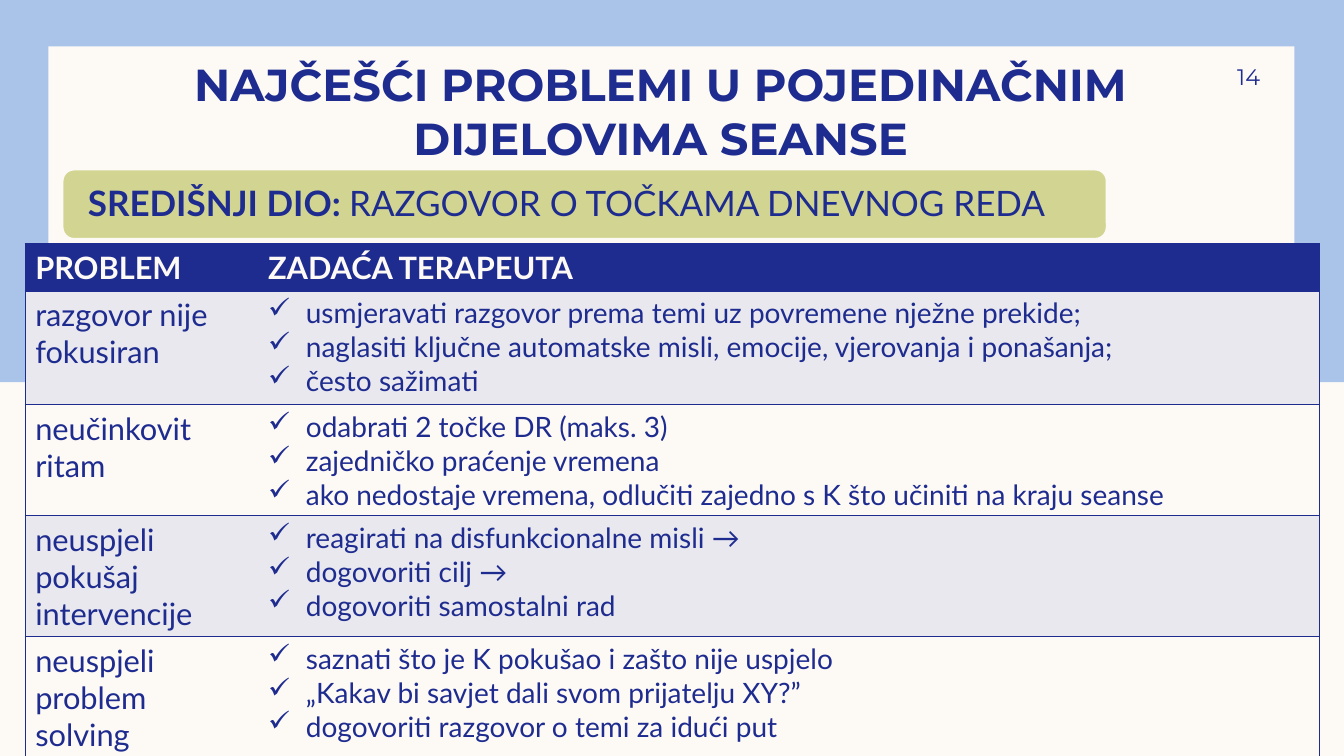
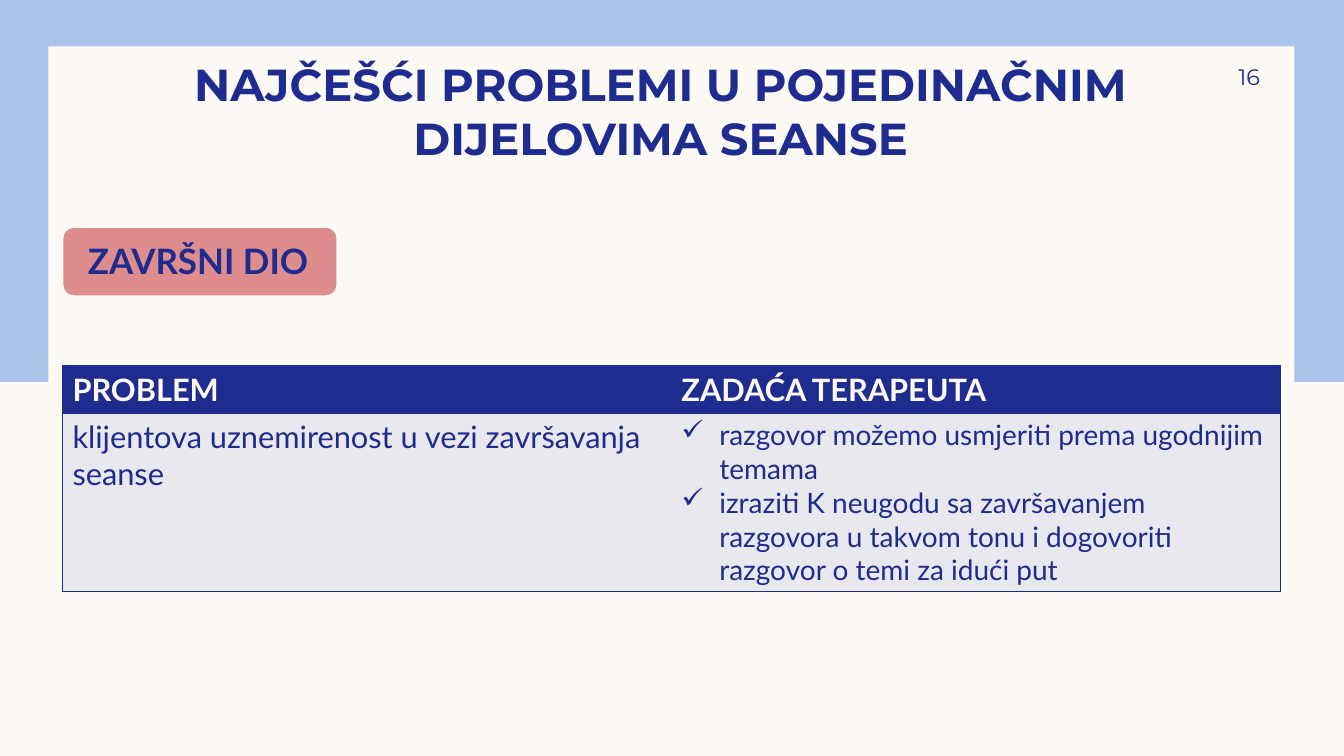
from dataclasses import dataclass

from lxml.etree import SubElement
from pptx import Presentation
from pptx.dml.color import RGBColor
from pptx.enum.shapes import MSO_SHAPE
from pptx.enum.text import MSO_ANCHOR, MSO_AUTO_SIZE, PP_ALIGN
from pptx.oxml import parse_xml
from pptx.oxml.ns import nsdecls, qn
from pptx.util import Pt


@dataclass(frozen=True)
class Theme:
    navy: str = "1F2C8F"
    cream: str = "FDFAF6"
    sky: str = "AAC3E8"
    mist: str = "E8E8EE"
    olive: str = "D2D592"
    rose: str = "DE8C8C"
    heading_font: str = "Montserrat"
    body_font: str = "Lato"
    title_size: int = 32
    banner_size: int = 25
    cell_size: int = 22
    bullet_size: int = 20
    number_size: int = 16


theme = Theme()
TITLE = "NAJČEŠĆI PROBLEMI U POJEDINAČNIM DIJELOVIMA SEANSE"
HEADER = ("PROBLEM", "ZADAĆA TERAPEUTA")
BULLET_INDENT = Pt(27)

# Each table row is a problem and the therapist's tasks
slides = [
    {
        "number": "14",
        "banner": (121, 746, theme.olive),
        "banner_runs": [("SREDIŠNJI DIO: ", True),
                        ("RAZGOVOR O TOČKAMA DNEVNOG REDA", False)],
        "table": (18, 174.2),
        "columns": (166.3, 758.2),
        "heights": (31.7, 81.4, 74.9, 81.4, 81.4),
        "rows": [
            ("razgovor nije fokusiran",
             ["usmjeravati razgovor prema temi uz povremene nježne prekide;",
              "naglasiti ključne automatske misli, emocije, vjerovanja i ponašanja;",
              "često sažimati"]),
            ("neučinkovit ritam",
             ["odabrati 2 točke DR (maks. 3)",
              "zajedničko praćenje vremena",
              "ako nedostaje vremena, odlučiti zajedno s K što učiniti na kraju seanse"]),
            ("neuspjeli pokušaj intervencije",
             ["reagirati na disfunkcionalne misli →",
              "dogovoriti cilj →",
              "dogovoriti samostalni rad"]),
            ("neuspjeli problem solving",
             ["saznati što je K pokušao i zašto nije uspjelo",
              "„Kakav bi savjet dali svom prijatelju XY?”",
              "dogovoriti razgovor o temi za idući put"]),
        ],
    },
    {
        "number": "16",
        "banner": (162, 196.5, theme.rose),
        "banner_runs": [("ZAVRŠNI DIO", True)],
        "table": (44.6, 261.4),
        "columns": (435, 435),
        "heights": (29.5, 29.5),
        "rows": [
            ("klijentova uznemirenost u vezi završavanja seanse",
             ["razgovor možemo usmjeriti prema ugodnijim temama",
              "izraziti K neugodu sa završavanjem razgovora u takvom tonu "
              "i dogovoriti razgovor o temi za idući put"]),
        ],
    },
]


def add_run(paragraph, text, size, bold=False, color=theme.navy, font=theme.body_font):
    run = paragraph.add_run()
    run.text = text
    run.font.name = font
    run.font.size = Pt(size)
    run.font.bold = bold
    run.font.color.rgb = RGBColor.from_string(color)


def add_block(slide, preset, left, top, width, height, fill):
    shape = slide.shapes.add_shape(preset, Pt(left), Pt(top), Pt(width), Pt(height))
    shape.shadow.inherit = False
    shape.fill.solid()
    shape.fill.fore_color.rgb = RGBColor.from_string(fill)
    shape.line.fill.background()
    return shape


presentation = Presentation()
presentation.slide_width = Pt(960)
presentation.slide_height = Pt(540)
background = presentation.slide_master.background.fill
background.solid()
background.fore_color.rgb = RGBColor.from_string(theme.cream)
layout = presentation.slide_layouts.get_by_name("Title Only")

for index, content in enumerate(slides):
    slide = presentation.slides.add_slide(layout)

    # Shared band and panel, moved behind the placeholders of the layout
    if index == 0:
        band = add_block(slide, MSO_SHAPE.RECTANGLE, -2, 0, 962, 273, theme.sky)
        panel = add_block(slide, MSO_SHAPE.RECTANGLE, 34.6, 33.1, 890, 474.5, theme.cream)
        for position, shape in enumerate((band, panel), start=2):
            layout.shapes.element.insert(position, shape.element)

    # Slide number
    number = slide.shapes.add_textbox(Pt(816), Pt(36), Pt(84), Pt(37.4))
    number.text_frame.word_wrap = True
    number.text_frame.vertical_anchor = MSO_ANCHOR.MIDDLE
    number.text_frame.margin_right = 0
    paragraph = number.text_frame.paragraphs[0]
    paragraph.alignment = PP_ALIGN.RIGHT
    add_run(paragraph, content["number"], theme.number_size, font=theme.heading_font)

    # Title
    title = slide.shapes.title
    title.left, title.top, title.width, title.height = Pt(128), Pt(36), Pt(688), Pt(81.4)
    frame = title.text_frame
    frame.auto_size = MSO_AUTO_SIZE.NONE
    frame.vertical_anchor = MSO_ANCHOR.BOTTOM
    frame.margin_top = frame.margin_bottom = 0
    paragraph = frame.paragraphs[0]
    paragraph.alignment = PP_ALIGN.CENTER
    add_run(paragraph, TITLE, theme.title_size, True, font=theme.heading_font)

    # Section banner
    top, width, fill = content["banner"]
    banner = add_block(slide, MSO_SHAPE.ROUNDED_RECTANGLE, 44.6, top, width, 49.7, fill)
    banner.line.color.rgb = RGBColor.from_string(theme.cream)
    banner.line.width = Pt(1.5)
    frame = banner.text_frame
    frame.word_wrap = True
    frame.vertical_anchor = MSO_ANCHOR.TOP
    frame.margin_left, frame.margin_top = Pt(15.8), Pt(6.5)
    paragraph = frame.paragraphs[0]
    paragraph.alignment = PP_ALIGN.LEFT
    for text, bold in content["banner_runs"]:
        add_run(paragraph, text, theme.banner_size, bold)

    # Table of problems and tasks
    rows = [HEADER] + content["rows"]
    left, top = content["table"]
    table = slide.shapes.add_table(
        len(rows), len(HEADER), Pt(left), Pt(top),
        Pt(sum(content["columns"])), Pt(sum(content["heights"]))).table
    for column, width in zip(table.columns, content["columns"]):
        column.width = Pt(width)
    for row, height in zip(table.rows, content["heights"]):
        row.height = Pt(height)

    for row_index, row in enumerate(rows):
        is_header = row_index == 0
        fill = theme.navy if is_header else (theme.cream, theme.mist)[row_index % 2]
        for column_index, entry in enumerate(row):
            cell = table.cell(row_index, column_index)
            cell.fill.solid()
            cell.fill.fore_color.rgb = RGBColor.from_string(fill)

            # Navy borders, with no line between the two columns
            inner_edge = "lnR" if column_index == 0 else "lnL"
            properties = cell._tc.get_or_add_tcPr()
            for position, edge in enumerate(("lnL", "lnR", "lnT", "lnB")):
                paint = "<a:noFill/>" if edge == inner_edge else (
                    f'<a:solidFill><a:srgbClr val="{theme.navy}"/></a:solidFill>')
                properties.insert(position, parse_xml(
                    f'<a:{edge} {nsdecls("a")} w="{Pt(1)}">{paint}</a:{edge}>'))

            # Plain text for headers and problems, check marks for tasks
            frame = cell.text_frame
            if isinstance(entry, str):
                add_run(frame.paragraphs[0], entry, theme.cell_size, is_header,
                        theme.cream if is_header else theme.navy)
                continue
            for task_index, task in enumerate(entry):
                paragraph = frame.add_paragraph() if task_index else frame.paragraphs[0]
                indent = paragraph._p.get_or_add_pPr()
                indent.set("marL", str(BULLET_INDENT))
                indent.set("indent", str(-BULLET_INDENT))
                SubElement(indent, qn("a:buChar"), char="✓")
                add_run(paragraph, task, theme.bullet_size)

presentation.save("out.pptx")
